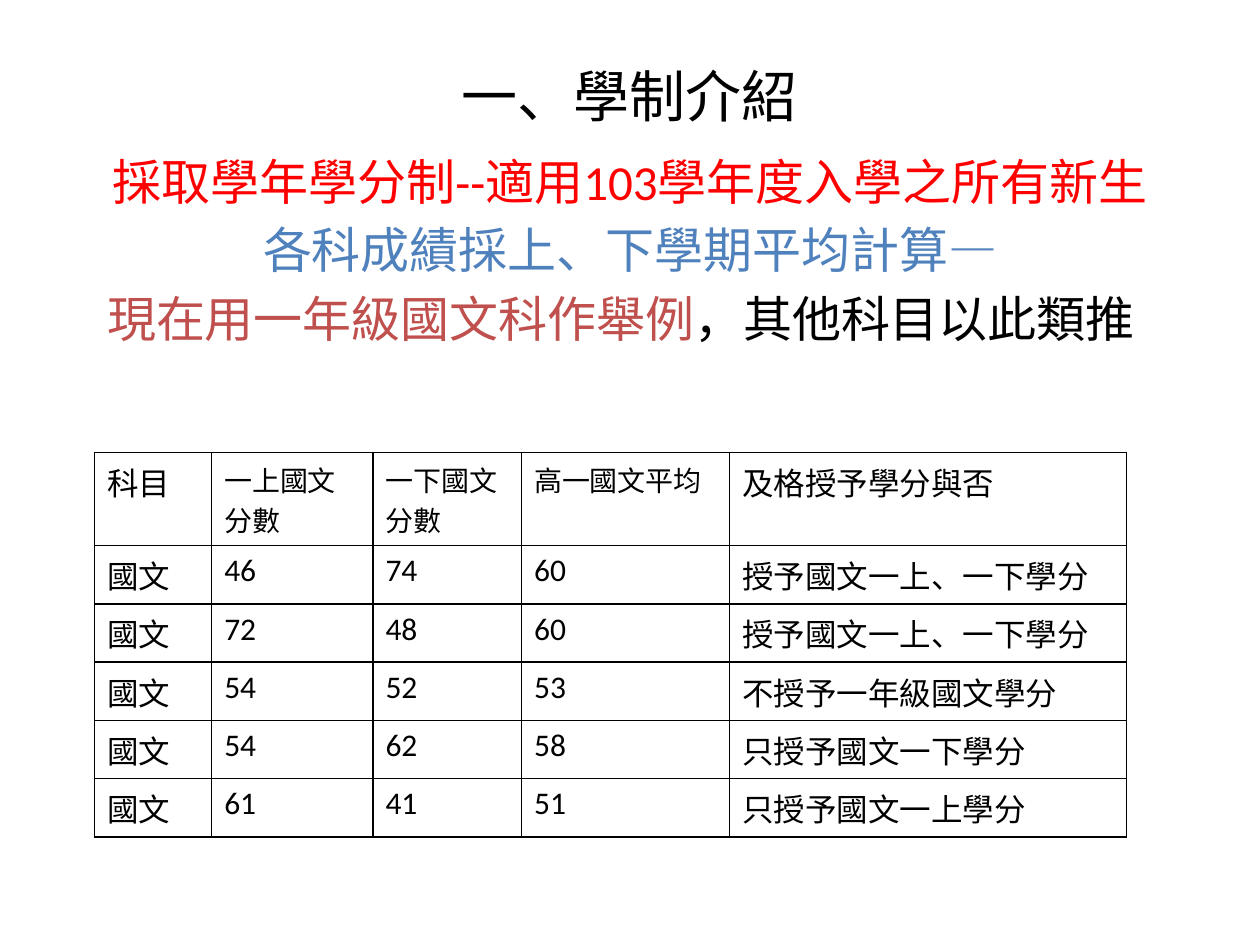
from dataclasses import dataclass

from lxml import etree
from pptx import Presentation
from pptx.dml.color import RGBColor
from pptx.enum.text import MSO_ANCHOR, MSO_AUTO_SIZE, PP_ALIGN
from pptx.oxml.ns import qn
from pptx.util import Inches, Pt

CENTER, LEFT = PP_ALIGN.CENTER, PP_ALIGN.LEFT
MIDDLE, TOP = MSO_ANCHOR.MIDDLE, MSO_ANCHOR.TOP
FIXED = MSO_AUTO_SIZE.NONE


@dataclass(frozen=True)
class Theme:
    font: str = "Calibri"
    black: str = "000000"
    red: str = "FF0000"
    blue: str = "4F81BD"
    brick: str = "C0504D"
    title: int = 32
    body: int = 28
    cell: int = 18
    small: int = 16
    rule: int = 1


class Deck:
    """Hold the theme and current slide, and add each kind of element."""

    def __init__(self, theme):
        self.theme = theme
        self.file = Presentation()
        self.file.slide_width, self.file.slide_height = Inches(10), Inches(7.5)
        self.slide = self.file.slides.add_slide(self.file.slide_layouts[0])

    def style(self, font, size, color):
        font.name, font.size = self.theme.font, Pt(size)
        font.color.rgb = RGBColor.from_string(color)

    def place(self, shape, box, anchor):
        shape.left, shape.top, shape.width, shape.height = map(Inches, box)
        frame = shape.text_frame
        frame.word_wrap, frame.auto_size = True, FIXED
        frame.vertical_anchor = anchor
        return frame

    def title(self, text, box):
        frame = self.place(self.slide.shapes.title, box, MIDDLE)
        frame.text = text
        para = frame.paragraphs[0]
        para.alignment = CENTER
        self.style(para.font, self.theme.title, self.theme.black)

    def body(self, lines, box):
        frame = self.place(self.slide.placeholders[1], box, TOP)
        for i, (align, parts) in enumerate(lines):
            para = frame.add_paragraph() if i else frame.paragraphs[0]
            para.alignment = align
            for text, color in parts:
                run = para.add_run()
                run.text = text
                self.style(run.font, self.theme.body, color)

    def border(self, cell):
        props = cell._tc.get_or_add_tcPr()
        for side in ("lnL", "lnR", "lnT", "lnB"):
            line = etree.SubElement(props, qn(f"a:{side}"), w=str(Pt(self.theme.rule)))
            fill = etree.SubElement(line, qn("a:solidFill"))
            etree.SubElement(fill, qn("a:srgbClr"), val=self.theme.black)

    def table(self, rows, spot, widths, heights):
        size = sum(widths), sum(heights)
        frame = self.slide.shapes.add_table(
            len(rows), len(widths), *map(Inches, (*spot, *size)))
        table = frame.table
        table.first_row = table.horz_banding = False
        for col, width in zip(table.columns, widths):
            col.width = Inches(width)
        for row, height in zip(table.rows, heights):
            row.height = Inches(height)
        for r, row in enumerate(rows):
            for c, text in enumerate(row):
                cell = table.cell(r, c)
                cell.text = text
                small = r == 0 and 0 < c < len(row) - 1
                size = self.theme.small if small else self.theme.cell
                self.style(cell.text_frame.paragraphs[0].font, size, self.theme.black)
                self.border(cell)
                cell.fill.background()


def main():
    theme = Theme()
    deck = Deck(theme)
    deck.title("一、學制介紹", (0.75, 0.52, 8.5, 0.47))
    deck.body([
        (CENTER, [("採取學年學分制--適用103學年度入學之所有新生", theme.red)]),
        (CENTER, [("各科成績採上、下學期平均計算—", theme.blue)]),
        (LEFT, [("現在用一年級國文科作舉例", theme.brick),
                ("，其他科目以此類推", theme.black)]),
    ], (0.75, 1.15, 8.5, 5.98))
    marks = [
        ("46", "74", "60", "授予國文一上、一下學分"),
        ("72", "48", "60", "授予國文一上、一下學分"),
        ("54", "52", "53", "不授予一年級國文學分"),
        ("54", "62", "58", "只授予國文一下學分"),
        ("61", "41", "51", "只授予國文一上學分"),
    ]
    head = ("科目", "一上國文分數", "一下國文分數", "高一國文平均", "及格授予學分與否")
    rows = [head] + [("國文", *mark) for mark in marks]
    deck.table(rows, (0.75, 3.59), (0.93, 1.28, 1.18, 1.65, 3.15),
               [0.74] + [0.46] * len(marks))
    deck.file.save("out.pptx")


if __name__ == "__main__":
    main()
